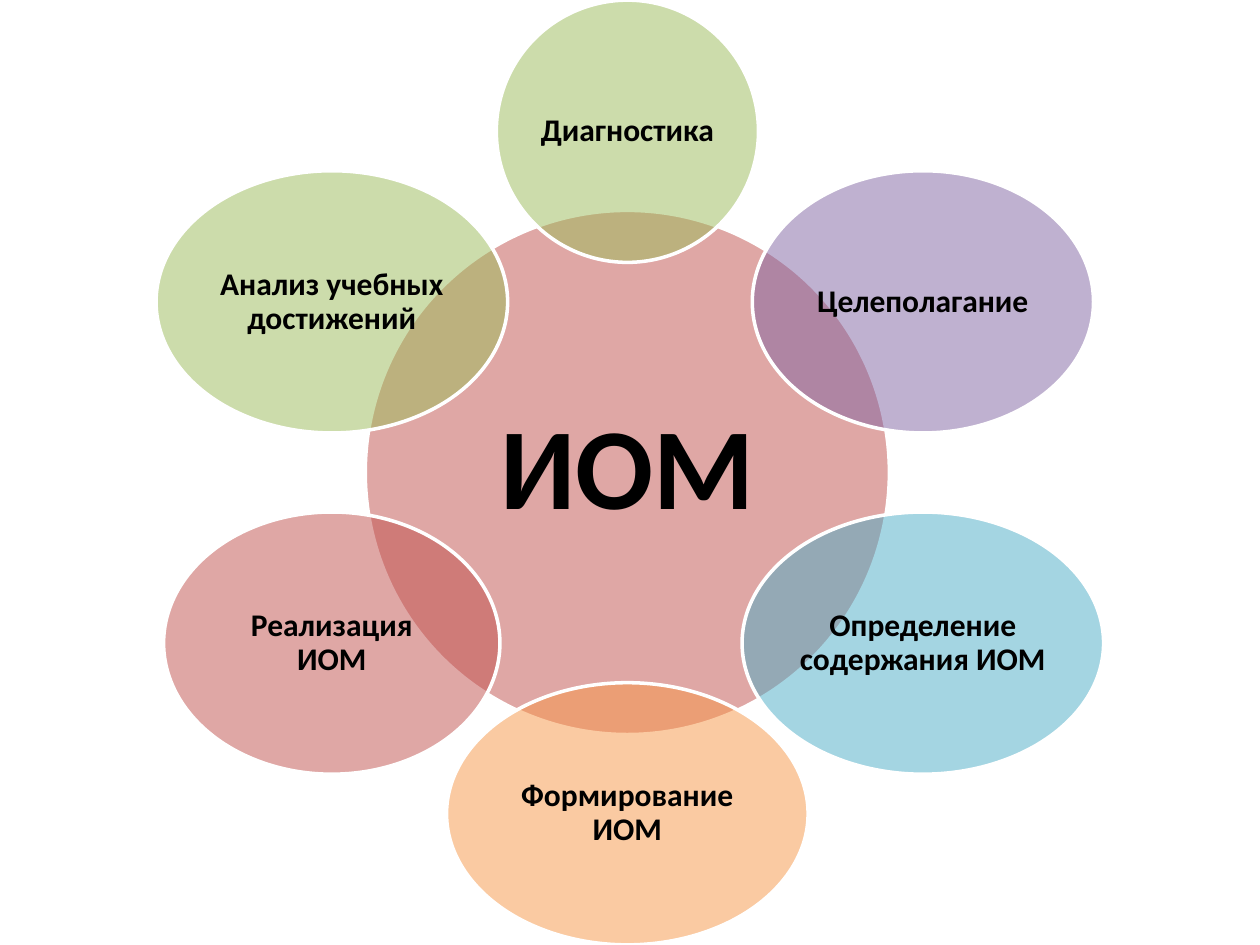
"""Build a radial diagram of the six stages around the ИОМ hub."""
from dataclasses import dataclass
from math import cos, radians, sin

from lxml import etree
from pptx import Presentation
from pptx.dml.color import RGBColor
from pptx.enum.shapes import MSO_SHAPE
from pptx.enum.text import MSO_ANCHOR, PP_ALIGN
from pptx.oxml.ns import qn
from pptx.slide import Slide
from pptx.util import Pt

OVAL = MSO_SHAPE.OVAL
MIDDLE = MSO_ANCHOR.MIDDLE
CENTER = PP_ALIGN.CENTER


@dataclass(frozen=True)
class Theme:
    font: str = "Calibri"
    text: str = "000000"
    outline: str = "FFFFFF"
    red: str = "C0504D"
    green: str = "9BBB59"
    purple: str = "8064A2"
    aqua: str = "4BACC6"
    orange: str = "F79646"
    opacity: int = 50
    hub_size: float = 66
    stage_size: float = 18


@dataclass(frozen=True)
class Bubble:
    text: str
    color: str
    width: float
    height: float
    size: float
    inset: float


THEME = Theme()
CENTER_X, CENTER_Y = 358.5, 270
ORBIT = 195
STAGE_HEIGHT = 149.8
HUB = Bubble("ИОМ", THEME.red, 299.5, 299.5, THEME.hub_size, 6.6)
STAGES = [
    Bubble(text, color, width, STAGE_HEIGHT, THEME.stage_size, 1.8)
    for text, color, width in (
        ("Диагностика", THEME.green, 149.8),
        ("Целеполагание", THEME.purple, 195),
        ("Определение содержания ИОМ", THEME.aqua, 206.6),
        ("Формирование ИОМ", THEME.orange, 206.6),
        ("Реализация ИОМ", THEME.red, 192.2),
        ("Анализ учебных достижений", THEME.green, 200.9),
    )
]


def draw_bubble(s: Slide, bubble: Bubble, x: float, y: float) -> None:
    sp = s.shapes.add_shape(
        OVAL, Pt(x - bubble.width / 2), Pt(y - bubble.height / 2),
        Pt(bubble.width), Pt(bubble.height))
    sp.shadow.inherit = False
    sp.fill.solid()
    sp.fill.fore_color.rgb = RGBColor.from_string(bubble.color)
    color = sp.element.spPr.find(qn("a:solidFill")).find(qn("a:srgbClr"))
    etree.SubElement(color, qn("a:alpha"), val=str(THEME.opacity * 1000))
    sp.line.color.rgb = RGBColor.from_string(THEME.outline)
    sp.line.width = Pt(2)

    tf = sp.text_frame
    tf.word_wrap = True
    tf.vertical_anchor = MIDDLE
    tf.margin_left = tf.margin_right = Pt(bubble.inset)
    tf.margin_top = tf.margin_bottom = Pt(bubble.inset)
    tf.text = bubble.text
    p = tf.paragraphs[0]
    p.alignment = CENTER
    p.line_spacing = 0.9
    font = p.runs[0].font
    font.name = THEME.font
    font.size = Pt(bubble.size)
    font.bold = True
    font.color.rgb = RGBColor.from_string(THEME.text)


def main() -> None:
    prs = Presentation()
    prs.slide_width, prs.slide_height = Pt(720), Pt(540)
    s = prs.slides.add_slide(prs.slide_layouts[6])
    draw_bubble(s, HUB, CENTER_X, CENTER_Y)
    for i, stage in enumerate(STAGES):
        angle = radians(i * 360 / len(STAGES))
        draw_bubble(s, stage, CENTER_X + ORBIT * sin(angle),
                    CENTER_Y - ORBIT * cos(angle))
    prs.save("out.pptx")


if __name__ == "__main__":
    main()
